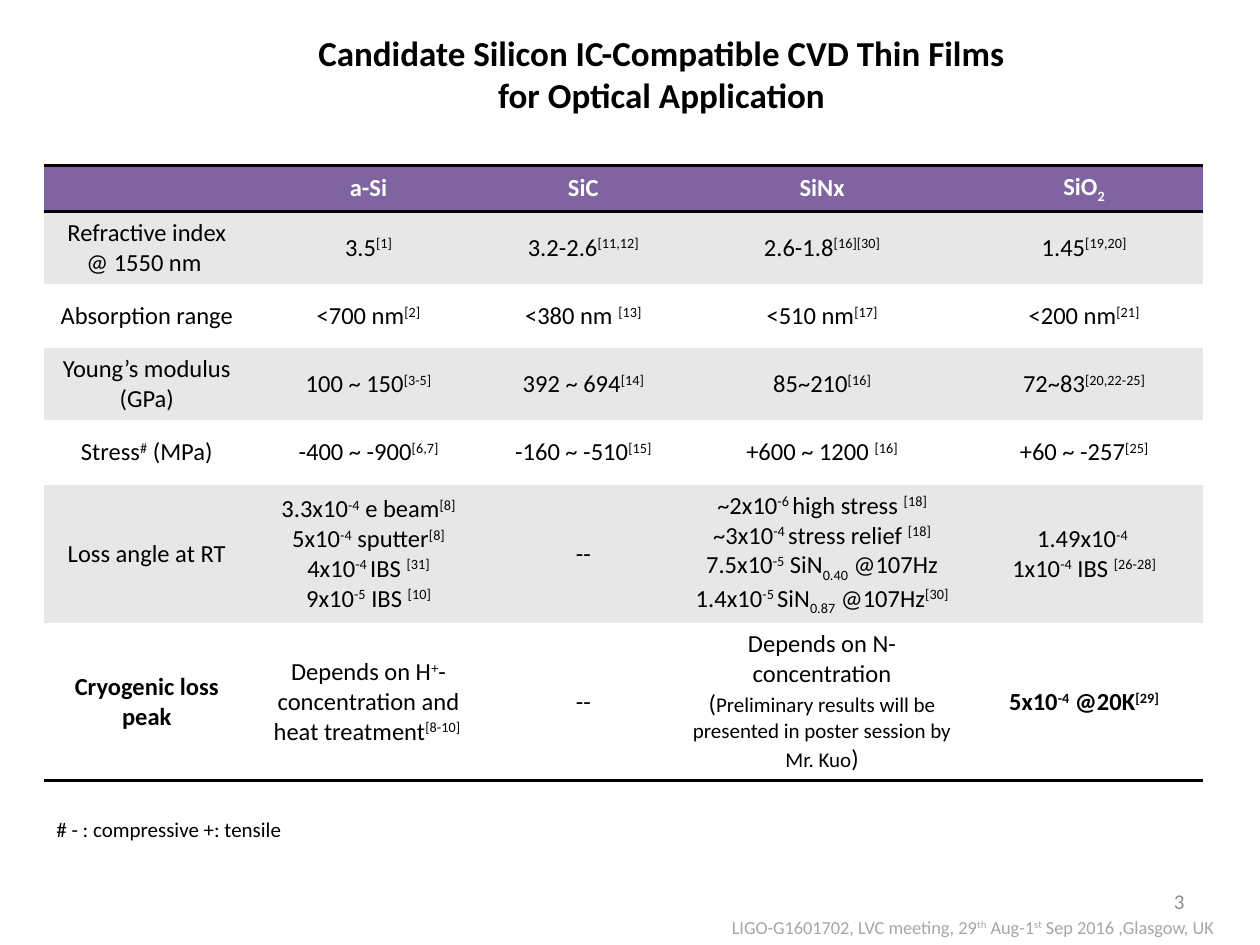
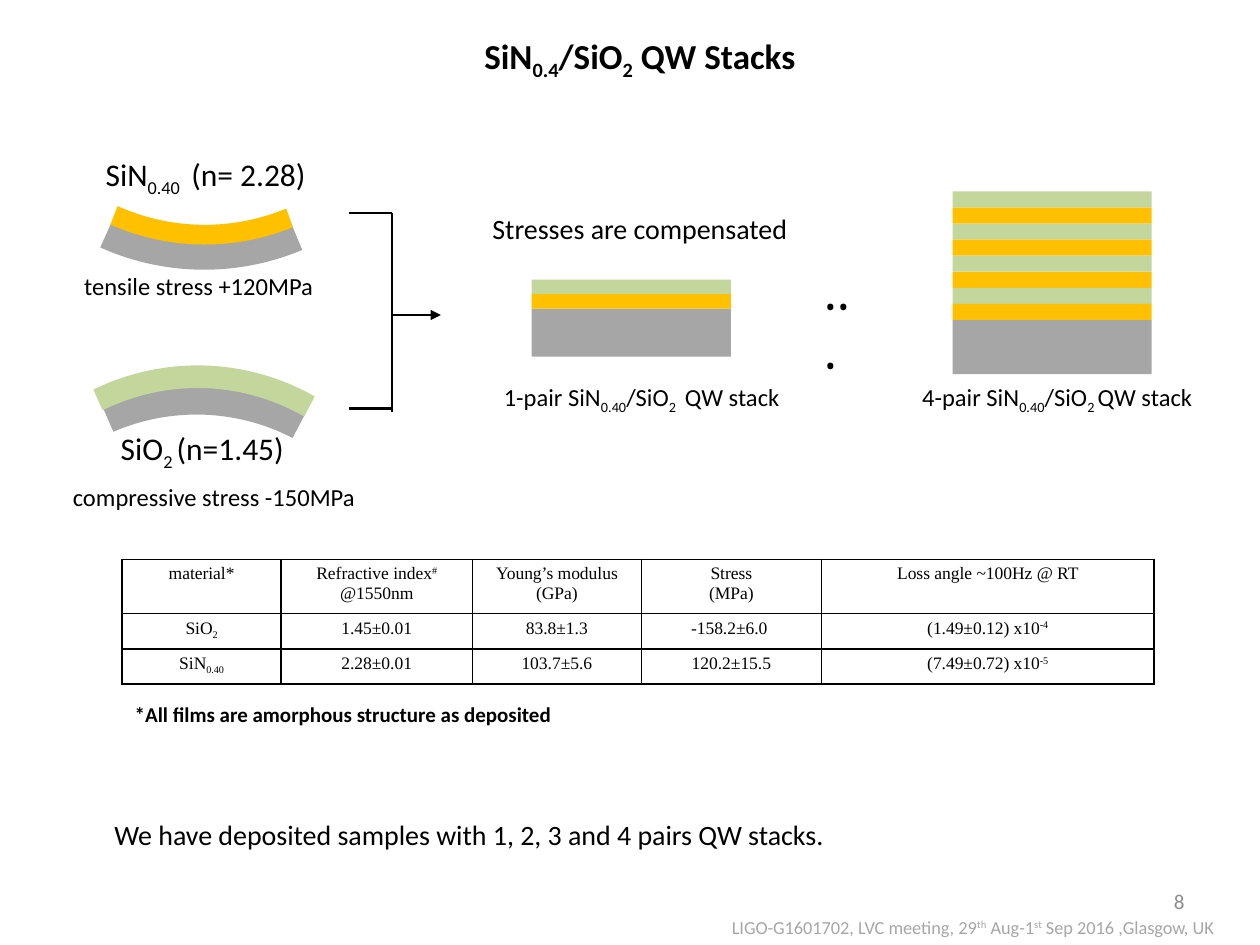
from dataclasses import dataclass, field

from lxml.etree import SubElement
from pptx import Presentation
from pptx.dml.color import RGBColor
from pptx.enum.shapes import MSO_CONNECTOR, MSO_SHAPE
from pptx.enum.text import MSO_ANCHOR, MSO_AUTO_SIZE, PP_ALIGN
from pptx.oxml.ns import qn
from pptx.util import Inches, Pt

HUES = {
    "black": "000000", "white": "FFFFFF", "head": "8064A2", "band": "E7E7E7",
    "foot": "A6A6A6", "page": "8C8C8C", "base": "A6A6A6",
    "nitride": "FFC000", "oxide": "C3D69B",
}
FOOTER = "LIGO-G1601702, LVC meeting, 29^th^ Aug-1^st^ Sep 2016 ,Glasgow, UK"
SHIFTS = {"^": "30000", "_": "-25000"}
SMALL = "`"


@dataclass
class Style:
    size: float
    hue: str = "black"
    bold: bool = False
    align: PP_ALIGN = PP_ALIGN.LEFT
    face: str = "Calibri"


@dataclass
class Label:
    text: str
    left: float
    top: float
    width: float
    height: float
    style: Style
    anchor: MSO_ANCHOR = MSO_ANCHOR.TOP


@dataclass
class Arc:
    left: float
    top: float
    width: float
    height: float
    turn: float
    start: float
    end: float
    thick: float
    hue: str


@dataclass
class Stack:
    left: float
    top: float
    floor: float
    base: float
    pairs: int
    width: float = 1.58


@dataclass
class Line:
    x1: float
    y1: float
    x2: float
    y2: float
    arrow: bool = False


@dataclass
class Grid:
    left: float
    top: float
    cols: list[float]
    rows: list[float]
    cells: list[list[str]]
    face: str
    size: float
    anchor: MSO_ANCHOR
    ruled: bool                 # every border drawn, no fills
    bold: set[tuple[int, int]] = field(default_factory=set)


# ---- Text: ^ marks superscript, _ subscript, ` smaller type ----
def color(name: str) -> RGBColor:
    return RGBColor.from_string(HUES[name])


def add_runs(para, text: str) -> None:
    for mark in (*SHIFTS, SMALL):
        text = text.replace(mark, "|" + mark)
    mode = ""
    for part in text.split("|"):
        if part and (part[0] in SHIFTS or part[0] == SMALL):
            mode = "" if mode else part[0]
            part = part[1:]
        if not part:
            continue
        run = para.add_run()
        run.text = part
        if mode in SHIFTS:
            run._r.get_or_add_rPr().set("baseline", SHIFTS[mode])
        elif mode == SMALL:
            run.font.size = Pt(12)


def write(frame, text: str, style: Style) -> None:
    for i, line in enumerate(text.split("\n")):
        para = frame.add_paragraph() if i else frame.paragraphs[0]
        para.alignment = style.align
        font = para.font
        font.name, font.size, font.bold = style.face, Pt(style.size), style.bold
        font.color.rgb = color(style.hue)
        add_runs(para, line)


def place(shape, label: Label) -> None:
    shape.left, shape.top = Inches(label.left), Inches(label.top)
    shape.width, shape.height = Inches(label.width), Inches(label.height)
    frame = shape.text_frame
    frame.word_wrap = True
    frame.auto_size = MSO_AUTO_SIZE.NONE
    frame.vertical_anchor = label.anchor
    write(frame, label.text, label.style)


def add_label(slide, label: Label) -> None:
    place(slide.shapes.add_textbox(0, 0, 0, 0), label)


# ---- Shapes ----
def paint(shape, hue: str) -> None:
    shape.shadow.inherit = False
    shape.fill.solid()
    shape.fill.fore_color.rgb = color(hue)
    shape.line.fill.background()


def add_arc(slide, arc: Arc) -> None:
    shape = slide.shapes.add_shape(
        MSO_SHAPE.BLOCK_ARC, Inches(arc.left), Inches(arc.top),
        Inches(arc.width), Inches(arc.height))
    shape.rotation = arc.turn
    # Angles are held in 60000ths of a degree, scaled by 100000
    for i, value in enumerate((arc.start * 0.6, arc.end * 0.6, arc.thick)):
        shape.adjustments[i] = value
    paint(shape, arc.hue)


def add_stack(slide, stack: Stack) -> None:
    def layer(top: float, height: float, hue: str) -> None:
        paint(slide.shapes.add_shape(
            MSO_SHAPE.RECTANGLE, Inches(stack.left), Inches(top),
            Inches(stack.width), Inches(height)), hue)

    count = 2 * stack.pairs
    step = (stack.floor - stack.top) / count
    layer(stack.floor, stack.base, "base")
    for i in range(count):
        layer(stack.top + i * step, step, "nitride" if i % 2 else "oxide")


def add_line(slide, line: Line) -> None:
    wire = slide.shapes.add_connector(
        MSO_CONNECTOR.STRAIGHT, Inches(line.x1), Inches(line.y1),
        Inches(line.x2), Inches(line.y2))
    wire.line.color.rgb = color("black")
    wire.line.width = Pt(1.5)
    if line.arrow:
        SubElement(wire.line._get_or_add_ln(), qn("a:tailEnd"), type="triangle")
    SubElement(wire._element.spPr, qn("a:effectLst"))


# ---- Tables ----
def add_edges(cell, widths: dict[str, float]) -> None:
    props = cell._tc.get_or_add_tcPr()
    for side in "LRTB":
        width = widths.get(side, 0)
        edge = SubElement(props, qn("a:ln" + side), w=str(Pt(width)))
        if width:
            solid = SubElement(edge, qn("a:solidFill"))
            SubElement(solid, qn("a:srgbClr"), val=HUES["black"])
        else:
            SubElement(edge, qn("a:noFill"))


def add_grid(slide, grid: Grid) -> None:
    table = slide.shapes.add_table(
        len(grid.rows), len(grid.cols), Inches(grid.left), Inches(grid.top),
        Inches(sum(grid.cols)), Inches(sum(grid.rows))).table
    table.first_row = table.horz_banding = False
    for col, width in zip(table.columns, grid.cols):
        col.width = Inches(width)
    for row, height in zip(table.rows, grid.rows):
        row.height = Inches(height)
    last = len(grid.rows) - 1
    for r, texts in enumerate(grid.cells):
        for c, text in enumerate(texts):
            cell = table.cell(r, c)
            cell.vertical_anchor = grid.anchor
            head = r == 0 and not grid.ruled
            if grid.ruled:
                add_edges(cell, dict.fromkeys("LRTB", 1))
                cell.margin_top = cell.margin_bottom = Inches(0.04)
                cell.margin_left = cell.margin_right = Inches(0.09)
                cell.fill.background()
            else:
                add_edges(cell, {"T": 2 * (r < 2), "B": 2 * (r in (0, last))})
                cell.fill.solid()
                cell.fill.fore_color.rgb = color(
                    "head" if head else "band" if r % 2 else "white")
            write(cell.text_frame, text, Style(
                grid.size, "white" if head else "black",
                head or (r, c) in grid.bold, PP_ALIGN.CENTER, grid.face))


# ---- Shared slide frame ----
def add_page(deck, title: Label, number: str):
    slide = deck.slides.add_slide(deck.slide_layouts[5])
    place(slide.shapes.title, title)
    add_label(slide, Label(FOOTER, 5.71, 7.22, 4.33, 0.28, Style(10.5, "foot")))
    add_label(slide, Label(number, 7.17, 6.95, 2.33, 0.4,
                           Style(12, "page", align=PP_ALIGN.RIGHT), MSO_ANCHOR.MIDDLE))
    return slide


HEAD = Style(20, bold=True, align=PP_ALIGN.CENTER)
NOTE, BODY, LEAD, NAME = Style(12), Style(14), Style(16), Style(18)

FILMS = Grid(
    0.35, 1.31, [1.63, 1.89, 1.52, 2.27, 1.89],
    [0.37, 0.56, 0.51, 0.57, 0.51, 1.09, 1.23],
    [
        ["", "a-Si", "SiC", "SiNx", "SiO_2_"],
        ["Refractive index\n@ 1550 nm ", "3.5^[1]^", "3.2-2.6^[11,12]^",
         "2.6-1.8^[16][30]^", "1.45^[19,20]^"],
        ["Absorption range", "<700 nm^[2]^", "<380 nm ^[13]^",
         "<510 nm^[17]^", "<200 nm^[21]^"],
        ["Young’s modulus (GPa)", "100 ~ 150^[3-5]^", "392 ~ 694^[14]^",
         "85~210^[16]^", "72~83^[20,22-25]^"],
        ["Stress^#^ (MPa)", "-400 ~ -900^[6,7]^", "-160 ~ -510^[15]^",
         "+600 ~ 1200 ^[16]^", "+60 ~ -257^[25]^"],
        ["Loss angle at RT",
         "3.3x10^-4^ e beam^[8]^\n5x10^-4^ sputter^[8]^\n"
         "4x10^-4 ^IBS ^[31]^\n9x10^-5^ IBS ^[10]^",
         "--",
         "~2x10^-6 ^high stress ^[18]^\n~3x10^-4 ^stress relief ^[18]^\n"
         "7.5x10^-5^ SiN_0.40_ @107Hz\n1.4x10^-5 ^SiN_0.87_ @107Hz^[30]^",
         "1.49x10^-4 ^\n1x10^-4^ IBS ^[26-28]^"],
        ["Cryogenic loss peak",
         "Depends on H^+^-concentration and heat treatment^[8-10] ^", "--",
         "Depends on N-concentration\n(`Preliminary results will be presented "
         "in poster session by Mr. Kuo`)",
         "5x10^-4^ @20K^[29]^"],
    ],
    "Calibri", 14, MSO_ANCHOR.MIDDLE, False, {(6, 0), (6, 4)})

RESULTS = Grid(
    0.97, 4.44, [1.26, 1.52, 1.34, 1.43, 2.64], [0.43, 0.28, 0.28],
    [
        ["material*", "Refractive index^#^\n@1550nm", "Young’s modulus (GPa)",
         "Stress\n(MPa)", "Loss angle ~100Hz @ RT"],
        ["SiO_2_", "1.45±0.01", "83.8±1.3", "-158.2±6.0 ", "(1.49±0.12) x10^-4^"],
        ["SiN_0.40_", "2.28±0.01", "103.7±5.6", "120.2±15.5", "(7.49±0.72) x10^-5^"],
    ],
    "Times New Roman", 10, MSO_ANCHOR.TOP, True)

ARCS = [
    Arc(-0.39, -1.88, 4.02, 4.02, 180, 247.2, 294.21, 0.056, "base"),
    Arc(-0.33, -2.23, 3.91, 4.17, 180, 250.25, 291.24, 0.04, "nitride"),
    Arc(-0.33, 3.06, 3.78, 3.78, 3.1, 243.48, 294.28, 0.061, "base"),
    Arc(-0.39, 2.9, 3.9, 4.07, 3.1, 242.96, 294.59, 0.046, "oxide"),
]
STACKS = [Stack(4.22, 2.22, 2.45, 0.38, 1), Stack(7.56, 1.52, 2.54, 0.43, 4)]
LINES = [
    Line(2.77, 1.69, 3.11, 1.69), Line(2.77, 3.24, 3.11, 3.24),
    Line(3.11, 1.69, 3.11, 3.27), Line(3.11, 2.5, 3.5, 2.5, True),
]
LABELS = [
    Label("tensile stress +120MPa", 0.57, 2.1, 2.04, 0.34, BODY),
    Label("SiN_0.40 _ (n= 2.28)", 0.74, 1.18, 1.85, 0.4, NAME),
    Label("compressive stress -150MPa", 0.48, 3.78, 2.46, 0.34, BODY),
    Label("SiO_2 _(n=1.45)", 0.86, 3.36, 1.53, 0.4, NAME),
    Label("1-pair SiN_0.40_/SiO_2 _ QW stack", 3.9, 2.98, 2.52, 0.34, BODY),
    Label("Stresses are compensated", 3.81, 1.63, 2.62, 0.37, LEAD),
    Label("4-pair SiN_0.40_/SiO_2 _QW stack", 7.22, 2.98, 2.49, 0.34, BODY),
    Label("‧‧‧", 6.44, 2.1, 0.48, 0.57, Style(28)),
    Label("*All films are amorphous structure as deposited",
          0.97, 5.52, 4.18, 0.3, Style(12, bold=True)),
    Label("We have deposited samples with 1, 2, 3 and 4 pairs QW stacks.",
          0.81, 6.44, 8.85, 0.37, LEAD),
]


def main() -> None:
    deck = Presentation()
    deck.slide_width, deck.slide_height = Inches(10), Inches(7.5)

    # Candidate films
    films = add_page(deck, Label(
        "Candidate Silicon IC-Compatible CVD Thin Films for Optical Application",
        2.24, 0.2, 6.02, 0.77, HEAD), "3")
    add_grid(films, FILMS)
    add_label(films, Label("# - : compressive +: tensile", 0.35, 6.43, 6.83, 0.3, NOTE))

    # Quarter-wave stacks
    stacks = add_page(deck, Label("SiN_0.4_/SiO_2_ QW Stacks ",
                                  2.58, 0.22, 5.06, 0.44, HEAD), "8")
    for draw, items in ((add_arc, ARCS), (add_stack, STACKS),
                        (add_line, LINES), (add_label, LABELS)):
        for item in items:
            draw(stacks, item)
    add_grid(stacks, RESULTS)
    deck.save("out.pptx")


if __name__ == "__main__":
    main()
